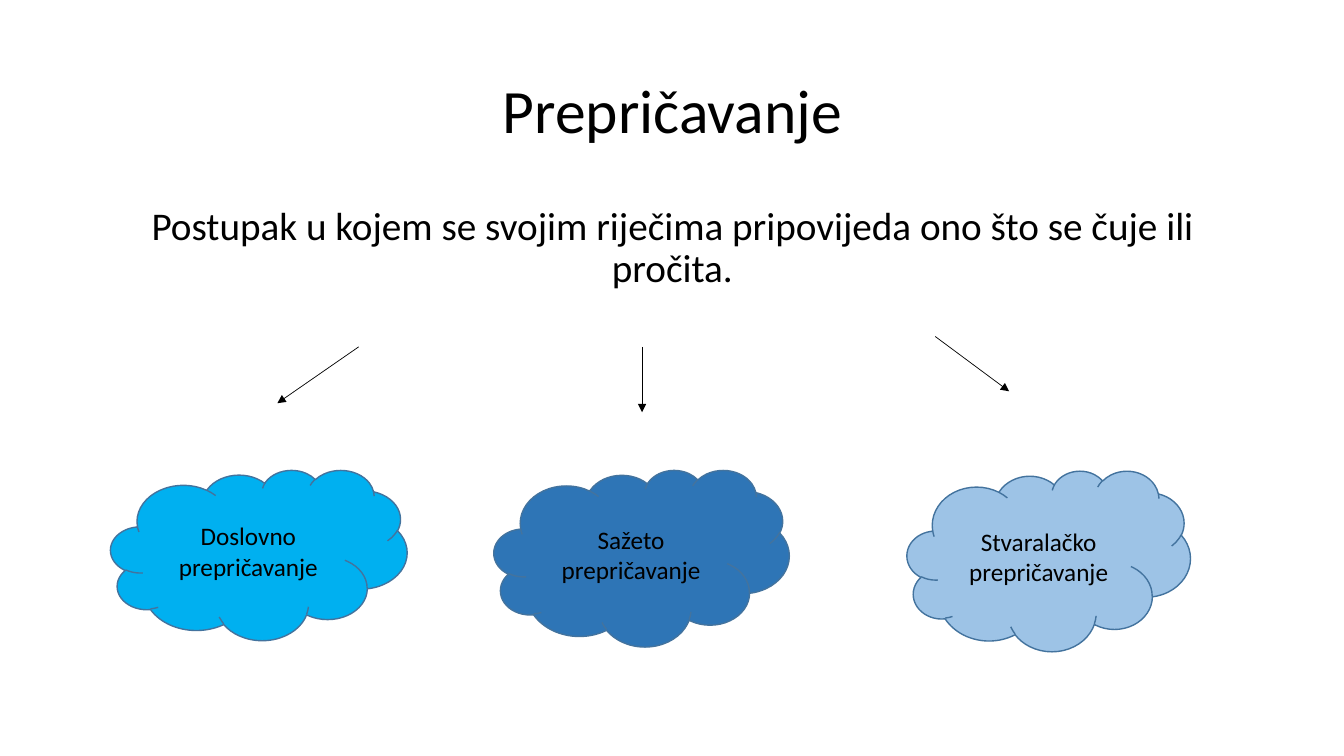
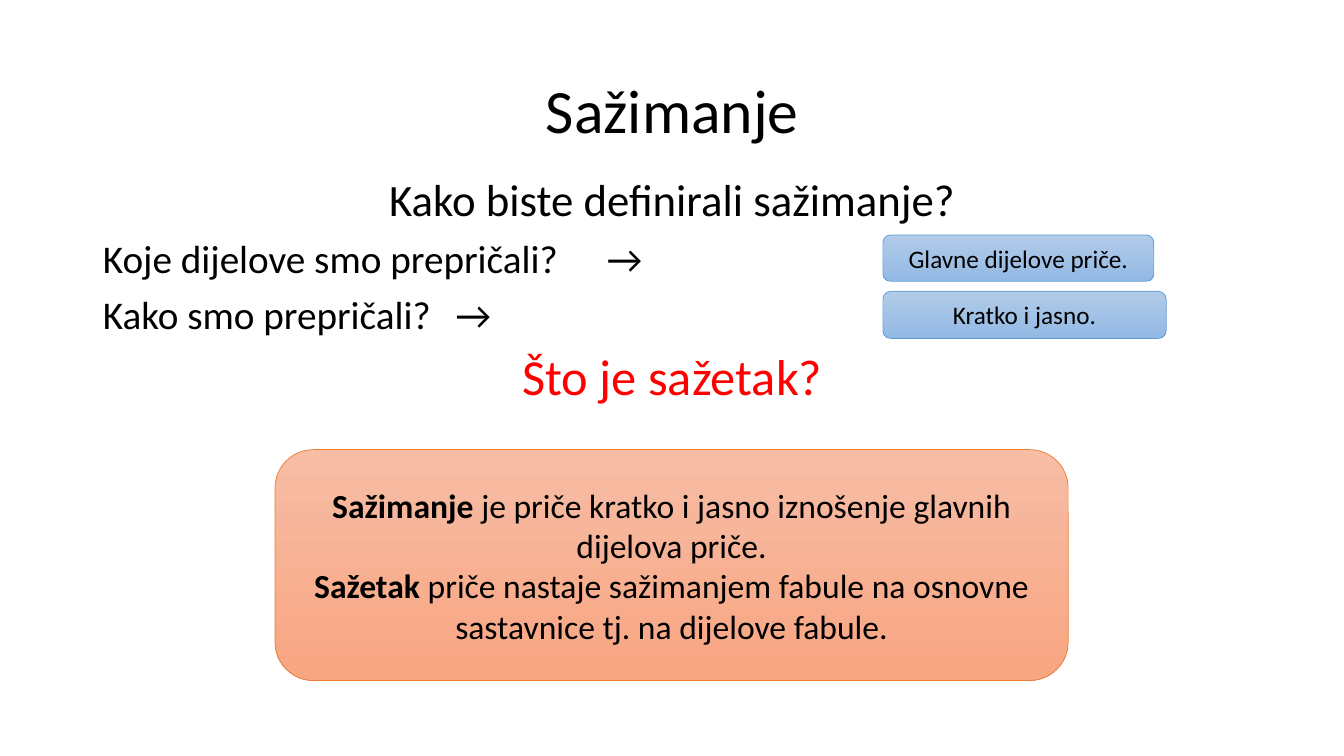
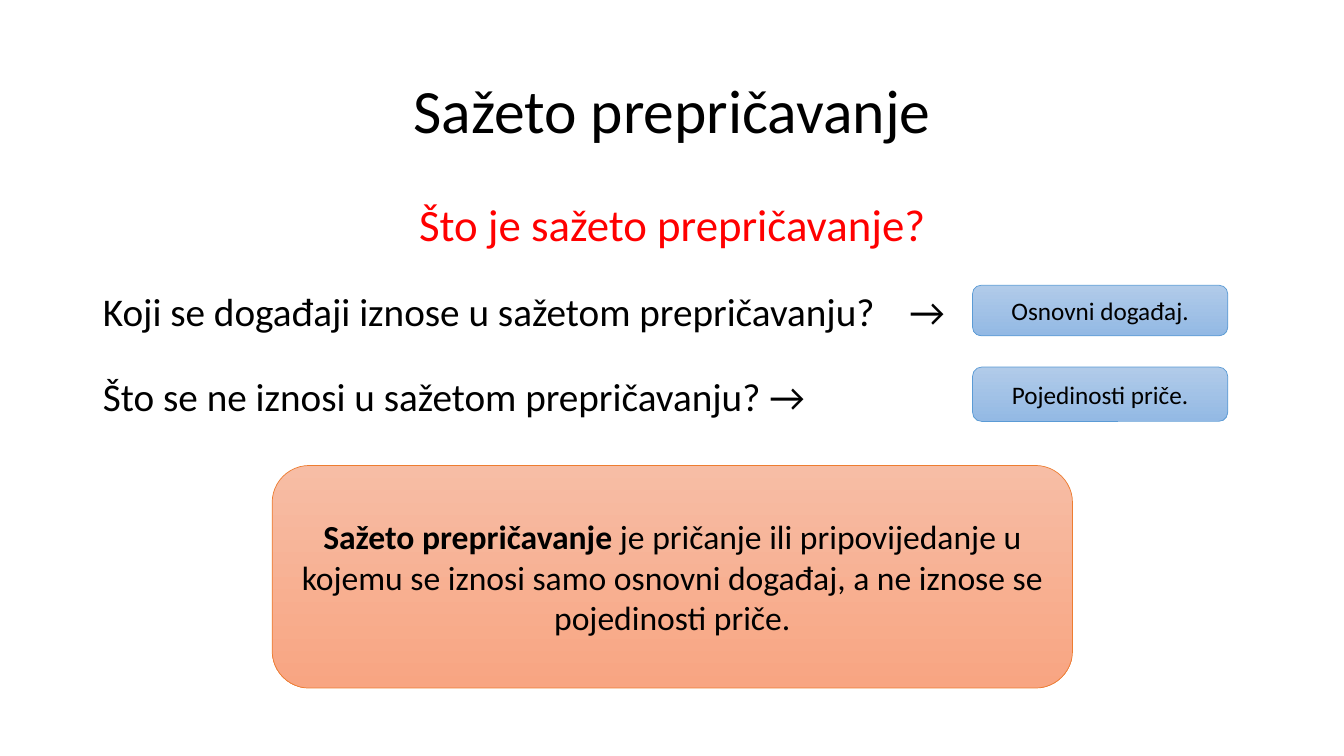
from dataclasses import dataclass

from lxml import etree
from pptx import Presentation
from pptx import util as u
from pptx.dml.color import RGBColor
from pptx.enum import shapes, text
from pptx.oxml.ns import qn


@dataclass(frozen=True)
class Theme:
    font: str = "Calibri"
    ink: RGBColor = RGBColor(0x00, 0x00, 0x00)
    accent: RGBColor = RGBColor(0xFF, 0x00, 0x00)
    sky: RGBColor = RGBColor(0x00, 0xB0, 0xF0)
    blue: RGBColor = RGBColor(0x2E, 0x75, 0xB6)
    pale: RGBColor = RGBColor(0x9D, 0xC3, 0xE6)
    cloud_line: RGBColor = RGBColor(0x43, 0x73, 0x9E)
    answer_top: RGBColor = RGBColor(0xB1, 0xCB, 0xE9)
    answer_bottom: RGBColor = RGBColor(0x93, 0xB9, 0xE4)
    answer_line: RGBColor = RGBColor(0x5B, 0x9B, 0xD5)
    summary_top: RGBColor = RGBColor(0xF7, 0xBD, 0xA5)
    summary_bottom: RGBColor = RGBColor(0xF8, 0xA5, 0x82)
    summary_line: RGBColor = RGBColor(0xED, 0x7D, 0x31)
    title: int = 44
    question: int = 36
    lead: int = 32
    body: int = 28
    summary: int = 24
    label: int = 18


theme = Theme()
CENTER, LEFT = text.PP_ALIGN.CENTER, text.PP_ALIGN.LEFT
CLOUD = shapes.MSO_SHAPE.CLOUD
ROUNDED = shapes.MSO_SHAPE.ROUNDED_RECTANGLE


def write(para, spans, size, color=theme.ink, align=CENTER):
    para.alignment = align
    for wording, bold in spans:
        span = para.add_run()
        span.text = wording
        span.font.name = theme.font
        span.font.size = u.Pt(size)
        span.font.bold = bold
        span.font.color.rgb = color


def add_box(page, kind, area, fills, line, width, size, paragraphs):
    box = page.shapes.add_shape(kind, *map(u.Cm, area))
    box.shadow.inherit = False
    if len(fills) == 1:
        box.fill.solid()
        box.fill.fore_color.rgb = fills[0]
    else:
        box.fill.gradient()
        box.fill.gradient_angle = 270
        for stop, color in zip(box.fill.gradient_stops, fills):
            stop.color.rgb = color
    box.line.color.rgb = line
    box.line.width = u.Pt(width)
    frame = box.text_frame
    frame.word_wrap = True
    frame.vertical_anchor = text.MSO_ANCHOR.MIDDLE
    for index, spans in enumerate(paragraphs):
        para = frame.add_paragraph() if index else frame.paragraphs[0]
        write(para, spans, size)


deck = Presentation()
deck.slide_width, deck.slide_height = u.Cm(33.87), u.Cm(19.05)
layout = deck.slide_layouts[1]

contents = [
    ("Prepričavanje", 5.08, 12.09, 0.9, [
        ("Postupak u kojem se svojim riječima pripovijeda ono što se čuje ili pročita.",
         theme.body, theme.ink, CENTER, None),
    ]),
    ("Sažimanje", 4.34, 12.83, 0.9, [
        ("Kako biste definirali sažimanje?", theme.lead, theme.ink, CENTER, None),
        ("Koje dijelove smo prepričali?\t→", theme.body, theme.ink, LEFT, 12.6),
        ("Kako smo prepričali?\t→", theme.body, theme.ink, LEFT, 12.7),
        ("Što je sažetak?", theme.question, theme.accent, CENTER, None),
    ]),
    ("Sažeto prepričavanje", 4.14, 14.07, 1.5, [
        ("Što je sažeto prepričavanje?", theme.lead, theme.accent, CENTER, None),
        ("Koji se događaji iznose u sažetom prepričavanju?\t→",
         theme.body, theme.ink, LEFT, 20.32),
        ("Što se ne iznosi u sažetom prepričavanju? →", theme.body, theme.ink, LEFT, None),
    ]),
]

pages = []
for heading, top, height, spacing, lines in contents:
    page = deck.slides.add_slide(layout)
    pages.append(page)
    title, body = page.shapes.title, page.placeholders[1]
    for holder, y, tall in ((title, 1.02, 3.68), (body, top, height)):
        holder.left, holder.top = u.Cm(2.34), u.Cm(y)
        holder.width, holder.height = u.Cm(29.21), u.Cm(tall)
        holder.text_frame.auto_size = text.MSO_AUTO_SIZE.NONE
    title.text_frame.vertical_anchor = text.MSO_ANCHOR.MIDDLE
    write(title.text_frame.paragraphs[0], [(heading, False)], theme.title)
    title.text_frame.paragraphs[0].line_spacing = 0.9
    for index, (wording, size, color, align, tab) in enumerate(lines):
        frame = body.text_frame
        para = frame.add_paragraph() if index else frame.paragraphs[0]
        write(para, [(wording, False)], size, color, align)
        para.line_spacing = spacing
        para.space_before = u.Pt(10)
        properties = para._p.get_or_add_pPr()
        properties.set("marL", "0")
        properties.set("indent", "0")
        etree.SubElement(properties, qn("a:buNone"))
        if tab:
            tabs = etree.SubElement(properties, qn("a:tabLst"))
            etree.SubElement(tabs, qn("a:tab"), pos=str(u.Cm(tab)), algn="l")

retelling, summarising, short_retelling = pages

for ends in (
    (9.04, 8.74, 6.99, 10.16),
    (16.18, 8.74, 16.18, 10.39),
    (23.57, 8.48, 25.43, 9.86),
):
    arrow = retelling.shapes.add_connector(shapes.MSO_CONNECTOR.STRAIGHT, *map(u.Cm, ends))
    arrow.line.color.rgb = theme.ink
    arrow.line.width = u.Pt(0.5)
    etree.SubElement(arrow.line._get_or_add_ln(), qn("a:tailEnd"), type="triangle")
    etree.SubElement(arrow._element.spPr, qn("a:effectLst"))

for wording, area, color in (
    ("Doslovno prepričavanje", (2.79, 11.84, 7.47, 4.29), theme.sky),
    ("Sažeto prepričavanje", (12.45, 11.84, 7.44, 4.45), theme.blue),
    ("Stvaralačko prepričavanje", (22.86, 11.86, 7.14, 4.55), theme.pale),
):
    add_box(retelling, CLOUD, area, [color], theme.cloud_line, 1, theme.label,
            [[(wording, False)]])

for page, wording, area in (
    (summarising, "Glavne dijelove priče.", (22.25, 5.92, 6.83, 1.17)),
    (summarising, "Kratko i jasno.", (22.25, 7.34, 7.14, 1.19)),
    (short_retelling, "Osnovni događaj.", (24.51, 7.19, 6.43, 1.27)),
    (short_retelling, "Pojedinosti priče.", (24.51, 9.25, 6.43, 1.37)),
):
    add_box(page, ROUNDED, area, [theme.answer_top, theme.answer_bottom],
            theme.answer_line, 0.5, theme.label, [[(wording, False)]])

for page, area, paragraphs in (
    (summarising, (6.93, 11.33, 19.99, 5.82), [
        [("Sažimanje", True),
         (" je priče kratko i jasno iznošenje glavnih dijelova priče.", False)],
        [("Sažetak", True),
         (" priče nastaje sažimanjem fabule na osnovne sastavnice tj. na dijelove fabule.",
          False)],
    ]),
    (short_retelling, (6.86, 11.73, 20.17, 5.61), [
        [("Sažeto prepričavanje ", True),
         ("je pričanje ili pripovijedanje u kojemu se iznosi samo osnovni događaj, "
          "a ne iznose se pojedinosti priče.", False)],
    ]),
):
    add_box(page, ROUNDED, area, [theme.summary_top, theme.summary_bottom],
            theme.summary_line, 0.5, theme.summary, paragraphs)

deck.save("out.pptx")
